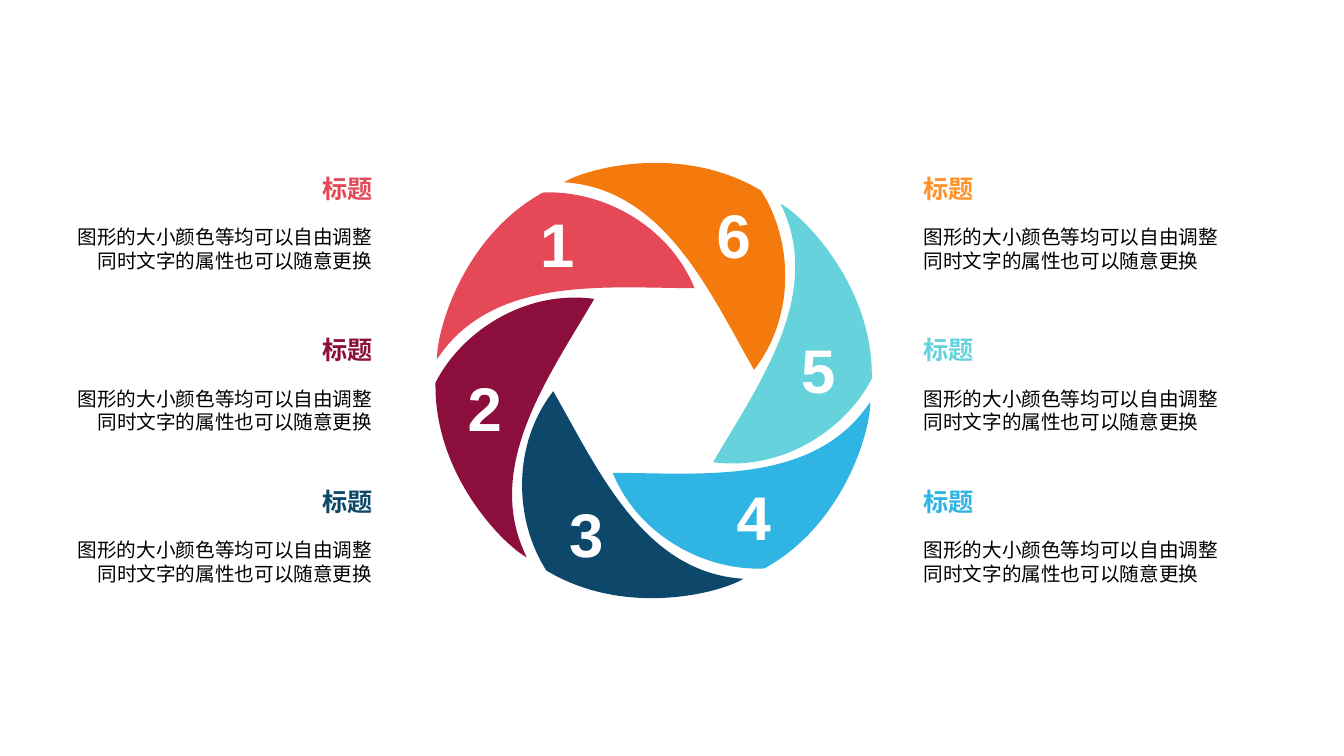
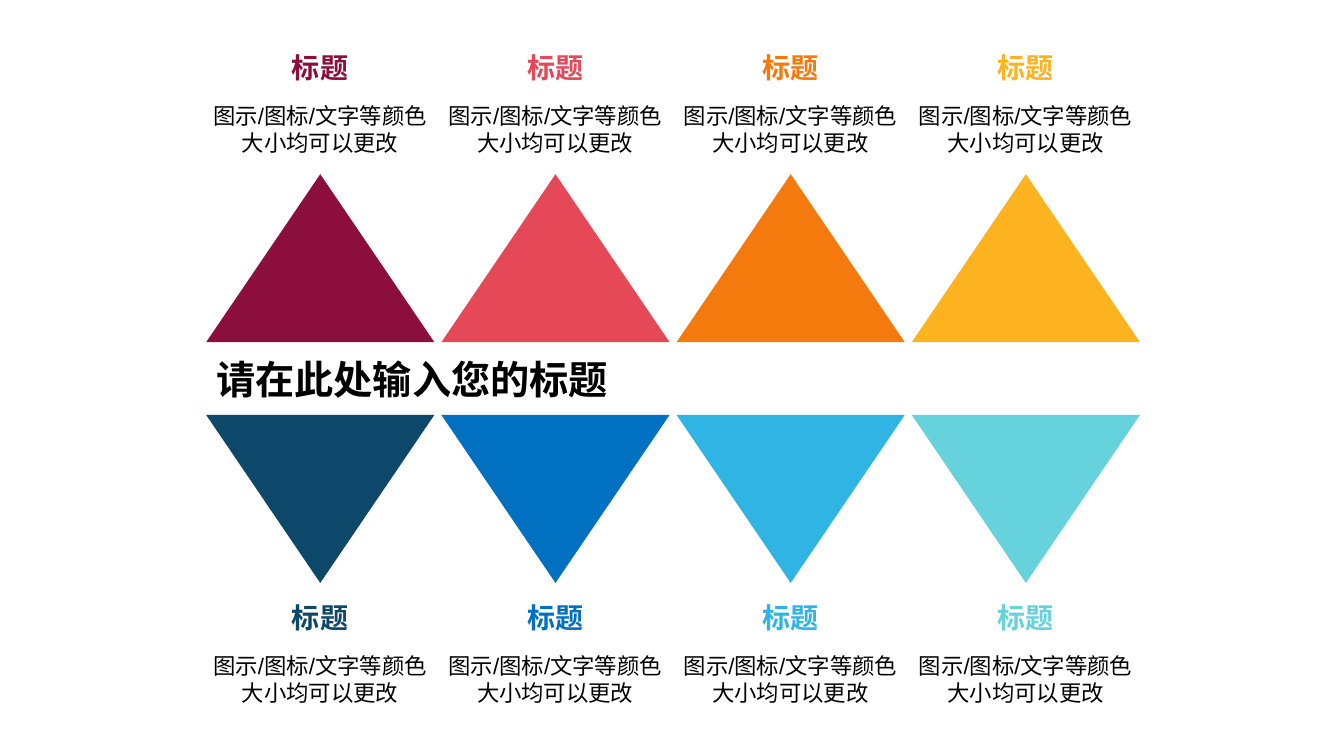
from math import cos, radians, sin

from lxml.etree import SubElement
from pptx import Presentation
from pptx.dml.color import RGBColor
from pptx.enum.shapes import MSO_SHAPE
from pptx.enum.text import MSO_ANCHOR, MSO_AUTO_SIZE, PP_ALIGN
from pptx.oxml.ns import qn
from pptx.util import Pt

BLACK = RGBColor(0x00, 0x00, 0x00)
WHITE = RGBColor(0xFF, 0xFF, 0xFF)
NAVY = RGBColor(0x0D, 0x47, 0x69)
BLUE = RGBColor(0x00, 0x70, 0xC0)
SKY = RGBColor(0x30, 0xB4, 0xE4)
AQUA = RGBColor(0x66, 0xD2, 0xDC)
ORANGE = RGBColor(0xF4, 0x7A, 0x0D)
LIGHT_ORANGE = RGBColor(0xFE, 0x92, 0x28)
YELLOW = RGBColor(0xFD, 0xB2, 0x20)
RED = RGBColor(0xE5, 0x48, 0x57)
WINE = RGBColor(0x8C, 0x0E, 0x3D)
FONT = "Arial"
HEADING = "标题"


def write_text(box, text, size, color, bold=False, align=PP_ALIGN.LEFT, wrap=True):
    frame = box.text_frame
    frame.text = text
    frame.word_wrap = wrap
    frame.auto_size = MSO_AUTO_SIZE.SHAPE_TO_FIT_TEXT
    frame.vertical_anchor = MSO_ANCHOR.TOP
    para = frame.paragraphs[0]
    para.alignment = align
    para.font.name = FONT
    para.font.size = Pt(size)
    para.font.bold = bold
    para.font.color.rgb = color


def paint(shape, color):
    shape.shadow.inherit = False
    shape.fill.solid()
    shape.fill.fore_color.rgb = color
    shape.line.fill.background()


deck = Presentation()
deck.slide_width = Pt(960)
deck.slide_height = Pt(540)
title_only_layout, blank_layout = deck.slide_layouts[5], deck.slide_layouts[6]

wheel_page = deck.slides.add_slide(blank_layout)
CENTER_X, CENTER_Y = 466.9, 271.8
OFFSET_X, OFFSET_Y = -25.6, 82.4
BLADE_WIDTH, BLADE_HEIGHT = 136.8, 169.9
blade_start = (136.8, 167.8)
blade_curves = [
    [(69.6, 142.6), (60.3, 62.1), (46.2, 0)],
    [(6.8, 27.7), (-7.6, 79.8), (4, 121)],
    [(48.9, 170.9), (120.7, 172.5), blade_start],
]
blade_corners = [(Pt(curve[-1][0]), Pt(curve[-1][1])) for curve in blade_curves]
blades = [
    ("3", NAVY, 399.4, 350.6),
    ("4", SKY, 519.1, 338.8),
    ("5", AQUA, 565.2, 233.7),
    ("6", ORANGE, 504.9, 137.2),
    ("1", RED, 378.7, 143.3),
    ("2", WINE, 326.9, 260.6),
]
blade_shapes = []
for index, (number, color, left, top) in enumerate(blades):
    turn = -60 * index
    angle = radians(turn)
    middle_x = CENTER_X + OFFSET_X * cos(angle) - OFFSET_Y * sin(angle)
    middle_y = CENTER_Y + OFFSET_X * sin(angle) + OFFSET_Y * cos(angle)
    builder = wheel_page.shapes.build_freeform(Pt(blade_start[0]), Pt(blade_start[1]))
    builder.add_line_segments(blade_corners, close=True)
    blade = builder.convert_to_shape()
    outline = blade.element.find(".//" + qn("a:path"))
    outline.set("w", str(Pt(BLADE_WIDTH)))
    outline.set("h", str(Pt(BLADE_HEIGHT)))
    for command in list(outline):
        outline.remove(command)
    for tag, points in [("a:moveTo", [blade_start])] + [
        ("a:cubicBezTo", curve) for curve in blade_curves
    ]:
        command = SubElement(outline, qn(tag))
        for x, y in points:
            SubElement(command, qn("a:pt"), x=str(Pt(x)), y=str(Pt(y)))
    SubElement(outline, qn("a:close"))
    blade.left, blade.top = Pt(middle_x - BLADE_WIDTH / 2), Pt(middle_y - BLADE_HEIGHT / 2)
    blade.width, blade.height = Pt(BLADE_WIDTH), Pt(BLADE_HEIGHT)
    blade.rotation = (343 + turn) % 360
    paint(blade, color)
    blade_shapes.append(blade)
wheel_page.shapes.add_group_shape(blade_shapes)

for number, color, left, top in blades:
    box = wheel_page.shapes.add_textbox(Pt(left), Pt(top), Pt(38.9), Pt(60.5))
    write_text(box, number, 44, WHITE, bold=True, wrap=False)

wheel_sides = [
    (223.2, 45.7, PP_ALIGN.RIGHT, [RED, WINE, NAVY]),
    (652.4, 652.6, PP_ALIGN.LEFT, [LIGHT_ORANGE, AQUA, SKY]),
]
for heading_left, body_left, align, colors in wheel_sides:
    for top, color in zip([120.2, 235.4, 343.8], colors):
        box = wheel_page.shapes.add_textbox(Pt(heading_left), Pt(top), Pt(50.4), Pt(28.8))
        write_text(box, HEADING, 18, color, bold=True, align=align, wrap=False)
        box = wheel_page.shapes.add_textbox(Pt(body_left), Pt(top + 37.2), Pt(227.5), Pt(41))
        body = "图形的大小颜色等均可以自由调整 同时文字的属性也可以随意更换"
        write_text(box, body, 14, BLACK, align=align)

triangle_page = deck.slides.add_slide(title_only_layout)
COLUMN_LEFT, COLUMN_PITCH = 147.3, 168
title = triangle_page.shapes.title
title.left, title.top, title.width, title.height = Pt(147.4), Pt(250.3), Pt(667.4), Pt(41)
write_text(title, "请在此处输入您的标题", 28, BLACK, bold=True, align=PP_ALIGN.JUSTIFY)

triangle_rows = [
    (MSO_SHAPE.ISOSCELES_TRIANGLE, 124.4, 32.2, [WINE, RED, ORANGE, YELLOW]),
    (MSO_SHAPE.FLOWCHART_MERGE, 296.4, 425.5, [NAVY, BLUE, SKY, AQUA]),
]
for preset, triangle_top, heading_top, colors in triangle_rows:
    for column, color in enumerate(colors):
        left = COLUMN_LEFT + column * COLUMN_PITCH
        triangle = triangle_page.shapes.add_shape(
            preset, Pt(left), Pt(triangle_top), Pt(163), Pt(120)
        )
        paint(triangle, color)
        box = triangle_page.shapes.add_textbox(
            Pt(left + 54), Pt(heading_top), Pt(54.7), Pt(31.6)
        )
        write_text(box, HEADING, 20, color, bold=True, align=PP_ALIGN.CENTER, wrap=False)
        box = triangle_page.shapes.add_textbox(
            Pt(left - 4.7), Pt(heading_top + 37), Pt(172), Pt(46)
        )
        body = "图示/图标/文字等颜色大小均可以更改"
        write_text(box, body, 16, BLACK, align=PP_ALIGN.CENTER)

deck.save("out.pptx")
